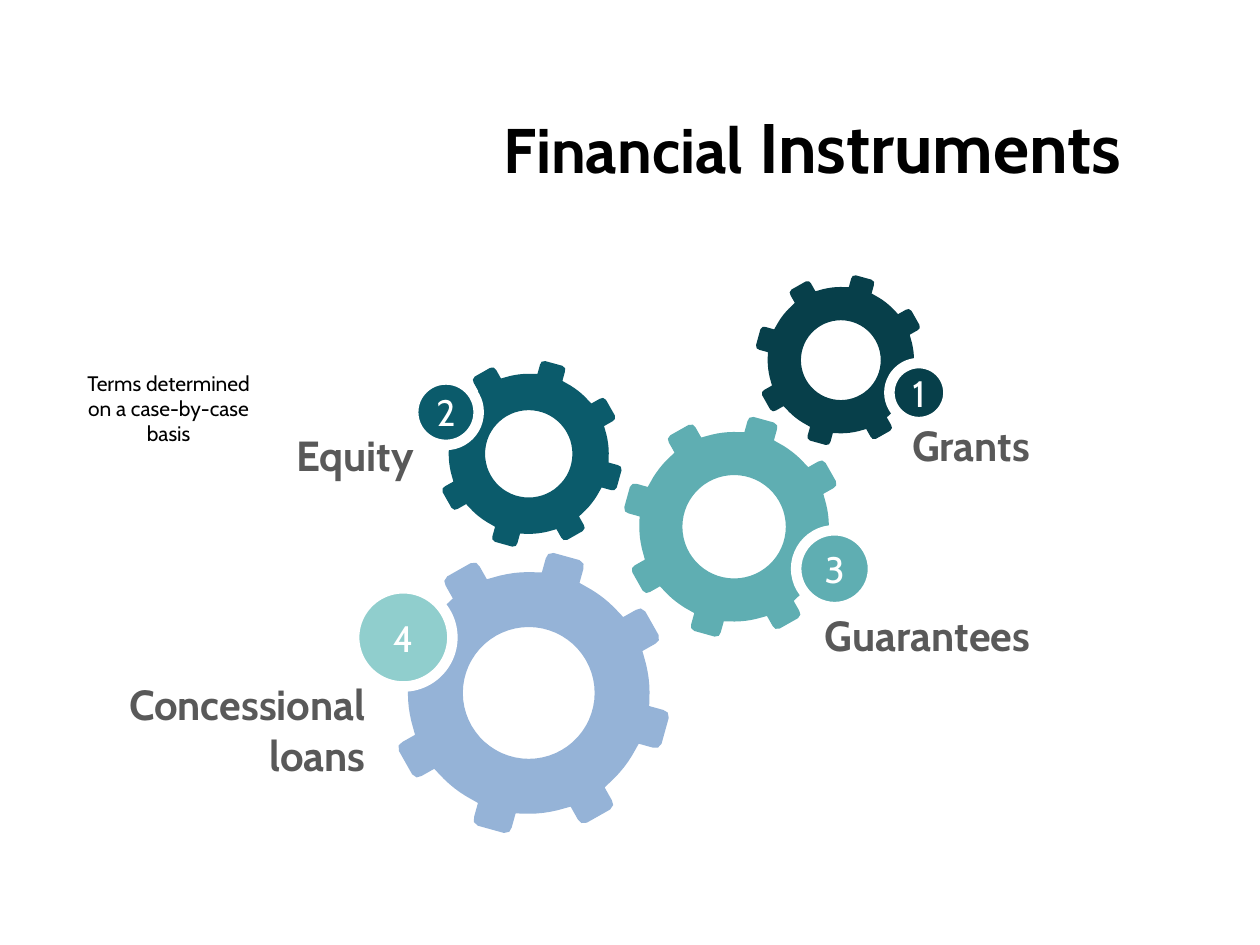
from math import cos, sin, atan2, pi, radians

from pptx import Presentation
from pptx.dml.color import RGBColor
from pptx.enum.shapes import MSO_SHAPE
from pptx.enum.text import MSO_ANCHOR, MSO_AUTO_SIZE, PP_ALIGN
from pptx.util import Cm, Pt

BLACK = RGBColor(0x00, 0x00, 0x00)
WHITE = RGBColor(0xFF, 0xFF, 0xFF)
GREY = RGBColor(0x59, 0x59, 0x59)
NAVY = RGBColor(0x07, 0x3F, 0x4A)
PETROL = RGBColor(0x0B, 0x5B, 0x6B)
TEAL = RGBColor(0x5F, 0xAE, 0xB2)
MINT = RGBColor(0x90, 0xCE, 0xCD)
BLUE = RGBColor(0x95, 0xB3, 0xD7)

TEETH = 8
TURN = radians(15.5)
HOLE = 0.54
# One tooth for a gear of radius 1: distance outward, distance sideways
TOOTH = [(0.98, -0.16), (1.1, -0.16), (1.14, -0.15), (1.16, -0.11),
         (1.16, 0.11), (1.14, 0.15), (1.1, 0.16), (0.98, 0.16)]


def ring(size, start, end, steps):
    """Points along an arc, both ends included."""
    turns = [start + (end - start) * i / steps for i in range(steps + 1)]
    return [(size * cos(a), size * sin(a)) for a in turns]


def rim():
    """Outline of a gear of radius 1."""
    pitch = 2 * pi / TEETH
    edge = atan2(TOOTH[-1][1], TOOTH[-1][0])
    points = []
    for i in range(TEETH):
        a = TURN + i * pitch
        points += [(u * cos(a) - v * sin(a), u * sin(a) + v * cos(a))
                   for u, v in TOOTH]
        points += ring(0.99, a + edge, a + pitch - edge, 8)[1:-1]
    return points


class Deck:
    font = "Cabin"

    def __init__(self):
        self.prs = Presentation()
        self.prs.slide_width, self.prs.slide_height = Cm(25.4), Cm(19.05)
        self.slide = self.prs.slides.add_slide(self.prs.slide_layouts[5])

    def words(self, frame, runs, color, align, bold=False):
        para = frame.paragraphs[0]
        para.alignment = align
        for text, size in runs:
            run = para.add_run()
            run.text = text
            run.font.name = self.font
            run.font.size = Pt(size)
            run.font.bold = bold
            run.font.color.rgb = color
        return para

    def title(self, box, runs):
        shape = self.slide.shapes.title
        shape.left, shape.top, shape.width, shape.height = map(Cm, box)
        frame = shape.text_frame
        frame.auto_size = MSO_AUTO_SIZE.NONE
        frame.vertical_anchor = MSO_ANCHOR.MIDDLE
        self.words(frame, runs, BLACK, PP_ALIGN.RIGHT, True)

    def label(self, box, text, size, color, align, bold=False):
        frame = self.slide.shapes.add_textbox(*map(Cm, box)).text_frame
        frame.word_wrap = True
        return self.words(frame, [(text, size)], color, align, bold)

    def gear(self, x, y, size, color):
        def place(points):
            return [(Cm(x + size * u), Cm(y + size * v)) for u, v in points]

        outer, inner = place(rim()), place(ring(HOLE, 2 * pi, 0, 60))
        form = self.slide.shapes.build_freeform(*outer[0])
        form.add_line_segments(outer[1:])
        form.move_to(*inner[0])
        form.add_line_segments(inner[1:])
        shape = form.convert_to_shape()
        shape.shadow.inherit = False
        shape.fill.solid()
        shape.fill.fore_color.rgb = color
        shape.line.fill.background()

    def badge(self, x, y, size, text, color):
        shape = self.slide.shapes.add_shape(
            MSO_SHAPE.OVAL, Cm(x), Cm(y), Cm(size), Cm(size))
        shape.shadow.inherit = False
        shape.fill.solid()
        shape.fill.fore_color.rgb = color
        shape.line.color.rgb = WHITE
        shape.line.width = Pt(6)
        frame = shape.text_frame
        frame.margin_left = frame.margin_right = 0
        frame.margin_top = frame.margin_bottom = 0
        frame.word_wrap = False
        frame.vertical_anchor = MSO_ANCHOR.MIDDLE
        self.words(frame, [(text, 21)], WHITE, PP_ALIGN.CENTER)


def main():
    deck = Deck()

    # Title
    deck.title((5.41, 2.01, 17.45, 1.83),
               [("Financial", 36), (" Instruments", 40)])

    # Gears with their numbers: centre, radius, colour; corner, width, colour
    for num, gear, badge in [
        ("4", (10.66, 13.97, 2.46, BLUE), (7.14, 11.86, 1.98, MINT)),
        ("3", (14.8, 10.62, 1.93, TEAL), (16.05, 10.69, 1.55, TEAL)),
        ("2", (10.66, 9.15, 1.63, PETROL), (8.33, 7.65, 1.32, PETROL)),
        ("1", (16.95, 7.26, 1.49, NAVY), (17.93, 7.32, 1.19, NAVY)),
    ]:
        deck.gear(*gear)
        x, y, size, color = badge
        deck.badge(x, y, size, num, color)

    # Names of the instruments
    for text, box, align in [
        ("Guarantees", (16.38, 12.17, 6.1, 1.27), PP_ALIGN.LEFT),
        ("Grants", (18.14, 8.33, 5.03, 1.27), PP_ALIGN.LEFT),
        ("Equity", (2.49, 8.53, 6.1, 1.27), PP_ALIGN.RIGHT),
        ("Concessional loans", (1.52, 13.56, 6.1, 2.31), PP_ALIGN.RIGHT),
    ]:
        deck.label(box, text, 24, GREY, align, True)

    # Side note, slightly indented
    note = deck.label((1.09, 7.34, 4.47, 1.65),
                      "Terms determined on a case-by-case basis",
                      12, BLACK, PP_ALIGN.CENTER)
    props = note._p.get_or_add_pPr()
    props.set("marL", str(Cm(0.15)))
    props.set("indent", "0")

    deck.prs.save("out.pptx")


if __name__ == "__main__":
    main()
